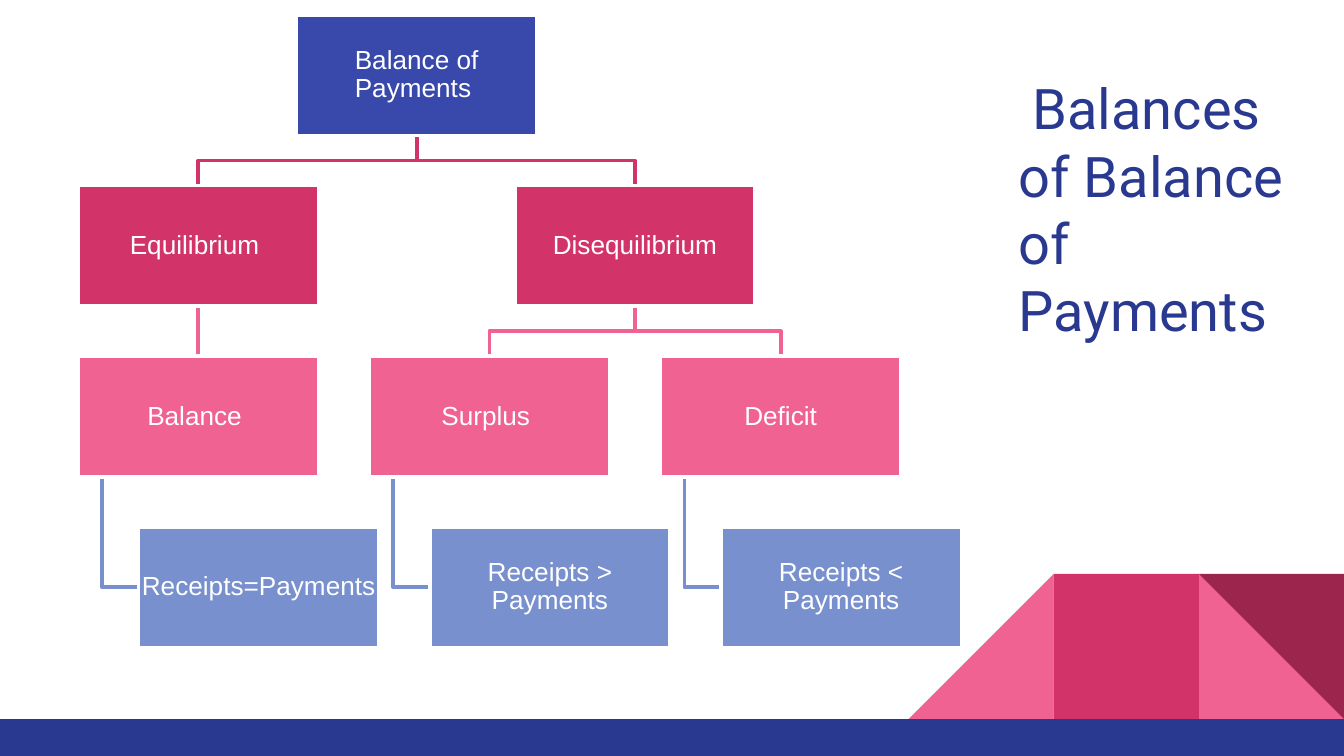
from dataclasses import dataclass
from typing import Optional

from lxml import etree
from pptx import Presentation
from pptx.dml.color import RGBColor
from pptx.enum import shapes, text
from pptx.oxml.ns import qn
from pptx.util import Inches, Pt

NAVY, INDIGO, BLUE = "2A3990", "3949AB", "7890CD"
CRIMSON, PINK, MAROON, WHITE = "D23369", "F06292", "9C254D", "FFFFFF"
RECT = shapes.MSO_SHAPE.RECTANGLE
TRIANGLE = shapes.MSO_SHAPE.RIGHT_TRIANGLE

BOX_W, BOX_H = 1.79, 0.9
LEFT, TOP = 0.58, 0.11
COLUMN, ROW = 6.5 / 3, 1.27
LEAF_INDENT, LEAF_STEM = 0.45, 0.18
LEVEL_COLORS = (INDIGO, CRIMSON, PINK, BLUE)
LEAF_LEVEL = 3


@dataclass
class Node:
    label: str
    level: int
    column: float
    parent: Optional["Node"] = None

    @property
    def x(self) -> float:
        indent = LEAF_INDENT if self.level == LEAF_LEVEL else 0
        return LEFT + self.column * COLUMN + indent

    @property
    def y(self) -> float:
        return TOP + self.level * ROW

    @property
    def color(self) -> str:
        return LEVEL_COLORS[self.level]


@dataclass
class Facet:
    kind: shapes.MSO_SHAPE
    x: float
    y: float
    w: float
    h: float
    color: str
    rotation: int = 0


def rgb(value: str) -> RGBColor:
    return RGBColor.from_string(value)


def add_facet(s, f: Facet):
    sp = s.shapes.add_shape(f.kind, Inches(f.x), Inches(f.y), Inches(f.w), Inches(f.h))
    sp.shadow.inherit = False
    sp.fill.solid()
    sp.fill.fore_color.rgb = rgb(f.color)
    sp.line.fill.background()
    sp.rotation = f.rotation
    return sp


def add_link(s, node: Node) -> None:
    """Join a node to its parent with a straight, stepped or L-shaped line."""
    parent = node.parent
    start_y = parent.y + BOX_H
    if node.level == LEAF_LEVEL:
        x, end_y = parent.x + LEAF_STEM, node.y + BOX_H / 2
        points = [(x, start_y), (x, end_y), (node.x, end_y)]
    else:
        x0, x1 = parent.x + BOX_W / 2, node.x + BOX_W / 2
        mid = (start_y + node.y) / 2
        points = [(x0, start_y), (x0, mid), (x1, mid), (x1, node.y)]
    points = [(Inches(x), Inches(y)) for x, y in points]

    if points[0][0] == points[-1][0]:
        sp = s.shapes.add_connector(shapes.MSO_CONNECTOR.STRAIGHT, *points[0], *points[-1])
        etree.SubElement(sp._element.spPr, qn("a:effectLst"))
    else:
        builder = s.shapes.build_freeform(*points[0])
        builder.add_line_segments(points[1:], close=False)
        sp = builder.convert_to_shape()
        sp.shadow.inherit = False
        sp.fill.background()
    sp.line.color.rgb = rgb(node.color)
    sp.line.width = Pt(2)


def add_box(s, node: Node) -> None:
    sp = add_facet(s, Facet(RECT, node.x, node.y, BOX_W, BOX_H, node.color))
    sp.line.color.rgb = rgb(WHITE)
    sp.line.width = Pt(2)
    tf = sp.text_frame
    tf.word_wrap = True
    tf.vertical_anchor = text.MSO_ANCHOR.MIDDLE
    tf.margin_left = tf.margin_right = tf.margin_top = tf.margin_bottom = Inches(0.01)
    p = tf.paragraphs[0]
    p.text = node.label
    p.alignment = text.PP_ALIGN.CENTER
    p.line_spacing = 0.9
    p.font.name, p.font.size, p.font.color.rgb = "Arial", Pt(14), rgb(WHITE)


def set_title(s, title: str) -> None:
    sp = s.shapes.title
    sp.left, sp.top, sp.width, sp.height = map(Inches, (7.48, 0.45, 2.18, 2.8))
    tf = sp.text_frame
    tf.word_wrap = True
    tf.auto_size = text.MSO_AUTO_SIZE.NONE
    tf.vertical_anchor = text.MSO_ANCHOR.TOP
    tf.margin_left = tf.margin_right = tf.margin_top = tf.margin_bottom = Inches(0.1)
    p = tf.paragraphs[0]
    p.text = title
    p.alignment = text.PP_ALIGN.LEFT
    p.font.name, p.font.size, p.font.color.rgb = "Roboto", Pt(30), rgb(NAVY)


def main() -> None:
    prs = Presentation()
    prs.slide_width = Inches(10)
    prs.slide_height = prs.slide_width * 9 // 16
    s = prs.slides.add_slide(prs.slide_layouts[5])
    set_title(s, " Balances of Balance of Payments")

    side, y = 1.08, 4.27
    for facet in (
        Facet(TRIANGLE, 10 - side, y, side, side, PINK),
        Facet(TRIANGLE, 10 - 3 * side, y, side, side, PINK, 270),
        Facet(RECT, 10 - 2 * side, y, side, side, CRIMSON),
        Facet(TRIANGLE, 10 - side, y, side, side, MAROON, 180),
        Facet(RECT, 0, y + side, 10, 0.28, NAVY),
    ):
        add_facet(s, facet)

    # Trailing spaces shift the centred lines slightly to the left.
    root = Node("Balance of Payments ", 0, 0.75)
    equilibrium = Node("Equilibrium ", 1, 0, root)
    disequilibrium = Node("Disequilibrium", 1, 1.5, root)
    balance = Node("Balance ", 2, 0, equilibrium)
    surplus = Node("Surplus ", 2, 1, disequilibrium)
    deficit = Node("Deficit", 2, 2, disequilibrium)
    nodes = [root, equilibrium, disequilibrium, balance, surplus, deficit]
    for parent, label in (
        (balance, "Receipts=Payments"),
        (surplus, "Receipts > Payments"),
        (deficit, "Receipts < Payments"),
    ):
        nodes.append(Node(label, LEAF_LEVEL, parent.column, parent))

    for node in nodes[1:]:
        add_link(s, node)
    for node in nodes:
        add_box(s, node)

    prs.save("out.pptx")


if __name__ == "__main__":
    main()
